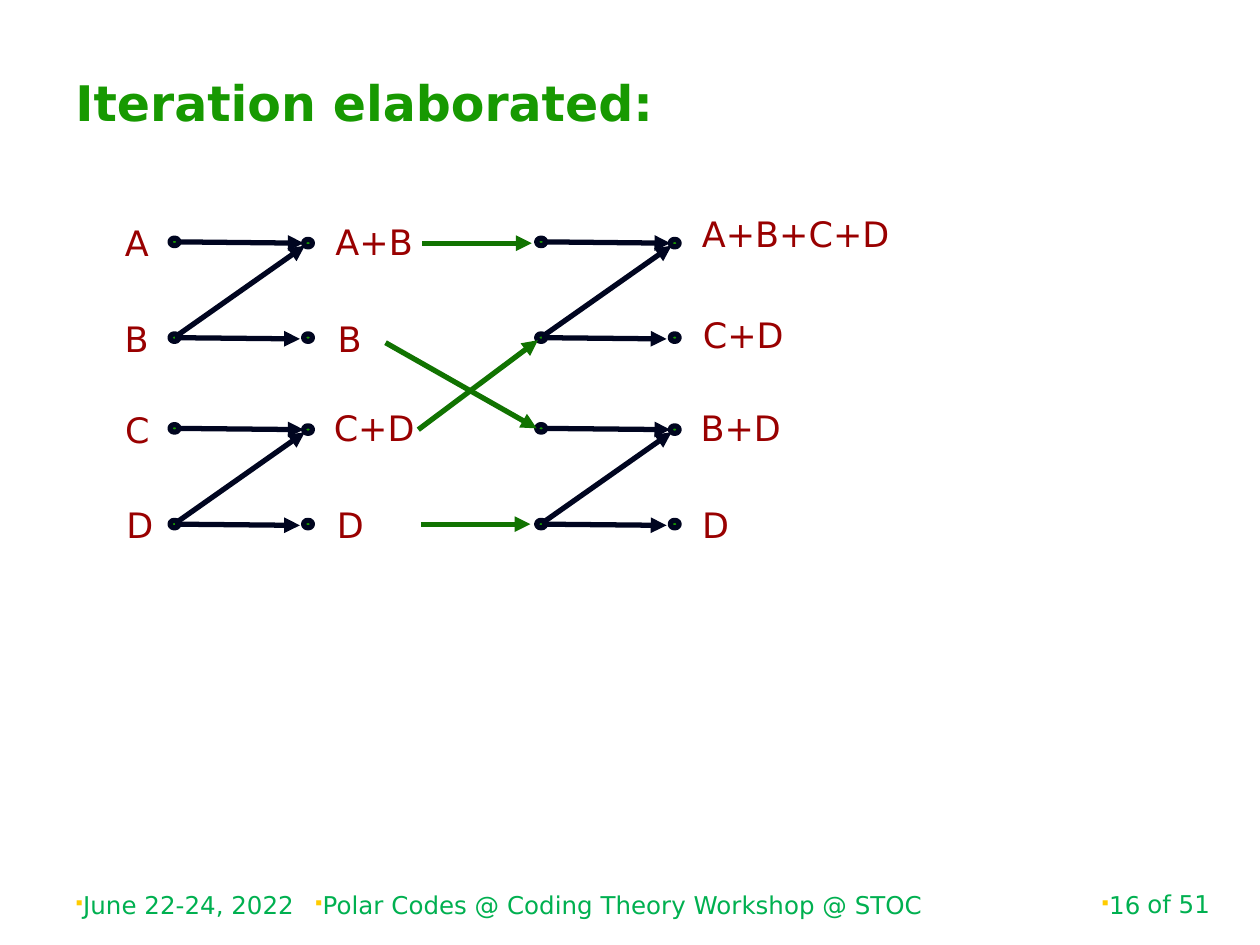
from itertools import product

from lxml import etree
from pptx import Presentation
from pptx import util as u
from pptx.dml.color import RGBColor
from pptx.enum import shapes, text
from pptx.oxml.ns import qn

COLORS = {
    "title": "179901",
    "footer": "00B050",
    "bullet": "FFCC00",
    "label": "990000",
    "node": "179901",
    "edge": "000520",
    "link": "117301",
}
FONT = "DejaVu Sans"
STAGE_X = (1.35, 4.26)
BLOCK_Y = (1.89, 3.37)
OUTPUT_DX, LOWER_DY = 1.06, 0.76
NODE_SIZE = (0.07, 0.06)

# Labels by (stage, block): text, left, top, width
LABELS = {
    (0, 0): [("A", 0.89, 1.71, 0.39), ("B", 0.89, 2.47, 0.39),
             ("A+B", 2.56, 1.7, 0.82), ("B", 2.58, 2.47, 0.39)],
    (0, 1): [("C", 0.89, 3.19, 0.4), ("D", 0.9, 3.95, 0.42),
             ("C+D", 2.55, 3.18, 0.84), ("D", 2.57, 3.95, 0.42)],
    (1, 0): [("A+B+C+D", 5.47, 1.64, 1.69), ("C+D", 5.48, 2.44, 0.84)],
    (1, 1): [("B+D", 5.46, 3.18, 0.84), ("D", 5.47, 3.95, 0.42)],
}
STAGE_LINKS = [
    ((3.34, 4.16), (4.21, 4.16)),
    ((3.06, 2.72), (4.26, 3.4)),
    ((3.32, 3.41), (4.27, 2.7)),
    ((3.35, 1.93), (4.22, 1.93)),
]
FOOTERS = [
    ("June 22-24, 2022", (0.5, 6.83, 2.17, 0.52), text.PP_ALIGN.LEFT),
    ("Polar Codes @ Coding Theory Workshop @ STOC",
     (2.4, 6.83, 5.19, 0.52), text.PP_ALIGN.LEFT),
    ("16", (7.65, 6.83, 1.5, 0.52), text.PP_ALIGN.RIGHT),
]


def inches(values):
    return [u.Inches(value) for value in values]


def rgb(name):
    return RGBColor.from_string(COLORS[name])


class Painter:
    """Holds the slide and the shape tree that receives new elements."""

    def __init__(self, slide):
        self.slide = slide
        self.target = slide.shapes

    def textbox(self, words, box, color, size, align=text.PP_ALIGN.LEFT,
                bold=False, **frame_format):
        frame = self.target.add_textbox(*inches(box)).text_frame
        for name, value in ({"word_wrap": True} | frame_format).items():
            setattr(frame, name, value)
        paragraph = frame.paragraphs[0]
        paragraph.alignment = align
        run = paragraph.add_run()
        run.text = words
        run.font.color.rgb = rgb(color)
        font_format = {"name": FONT, "size": u.Pt(size), "bold": bold}
        for name, value in font_format.items():
            setattr(run.font, name, value)
        return paragraph

    def footer(self, words, box, align, bulleted=True):
        paragraph = self.textbox(words, box, "footer", 14, align,
                                 vertical_anchor=text.MSO_ANCHOR.BOTTOM)
        if bulleted:
            self.bullet(paragraph)

    def bullet(self, paragraph):
        """Put a small square directly before the text, without indent."""
        props = paragraph._p.get_or_add_pPr()
        props.set("marL", "0")
        props.set("indent", "0")
        color = etree.SubElement(props, qn("a:buClr"))
        etree.SubElement(color, qn("a:srgbClr"), val=COLORS["bullet"])
        etree.SubElement(props, qn("a:buSzPct"), val="70000")
        etree.SubElement(props, qn("a:buFont"), typeface="Wingdings")
        etree.SubElement(props, qn("a:buChar"), char="§")

    def label(self, words, left, top, width):
        self.textbox(words, (left, top, width, 0.44), "label", 20,
                     text.PP_ALIGN.CENTER, word_wrap=False,
                     auto_size=text.MSO_AUTO_SIZE.SHAPE_TO_FIT_TEXT)

    def node(self, left, top):
        dot = self.target.add_shape(shapes.MSO_SHAPE.OVAL,
                                    *inches((left, top, *NODE_SIZE)))
        dot.shadow.inherit = False
        dot.fill.solid()
        dot.fill.fore_color.rgb = rgb("node")
        dot.line.color.rgb = rgb("edge")
        dot.line.width = u.Pt(3)

    def arrow(self, start, end, color):
        arrow = self.target.add_connector(shapes.MSO_CONNECTOR.STRAIGHT,
                                          *inches((*start, *end)))
        arrow.line.color.rgb = rgb(color)
        arrow.line.width = u.Pt(3)
        etree.SubElement(arrow.line._get_or_add_ln(), qn("a:tailEnd"),
                         type="triangle")
        etree.SubElement(arrow._element.spPr, qn("a:effectLst"))

    def butterfly(self, left, top, labels):
        """Group two inputs, two outputs, their three edges and labels."""
        self.target = self.slide.shapes.add_group_shape().shapes
        for dx, dy in ((0, 0), (0, LOWER_DY),
                       (OUTPUT_DX, 0.01), (OUTPUT_DX, LOWER_DY)):
            self.node(left + dx, top + dy)
        for (x1, y1), (x2, y2) in (((0.07, 0.03), (1.06, 0.04)),
                                   ((0.06, 0.77), (1.07, 0.06)),
                                   ((0.04, 0.79), (1.03, 0.8))):
            self.arrow((left + x1, top + y1), (left + x2, top + y2), "edge")
        for label in labels:
            self.label(*label)
        self.target = self.slide.shapes


def main():
    deck = Presentation()
    deck.slide_width, deck.slide_height = inches((10, 7.5))
    painter = Painter(deck.slides.add_slide(deck.slide_layouts[6]))

    painter.footer("of 51", (8.98, 6.82, 0.75, 0.52),
                   text.PP_ALIGN.CENTER, bulleted=False)
    painter.textbox("Iteration elaborated:", (0.5, 0.42, 9, 0.67), "title",
                    28, bold=True, vertical_anchor=text.MSO_ANCHOR.BOTTOM)
    for footer in FOOTERS:
        painter.footer(*footer)
    for stage, block in product(range(2), repeat=2):
        painter.butterfly(STAGE_X[stage], BLOCK_Y[block],
                          LABELS[stage, block])
    for start, end in STAGE_LINKS:
        painter.arrow(start, end, "link")
    deck.save("out.pptx")


if __name__ == "__main__":
    main()
